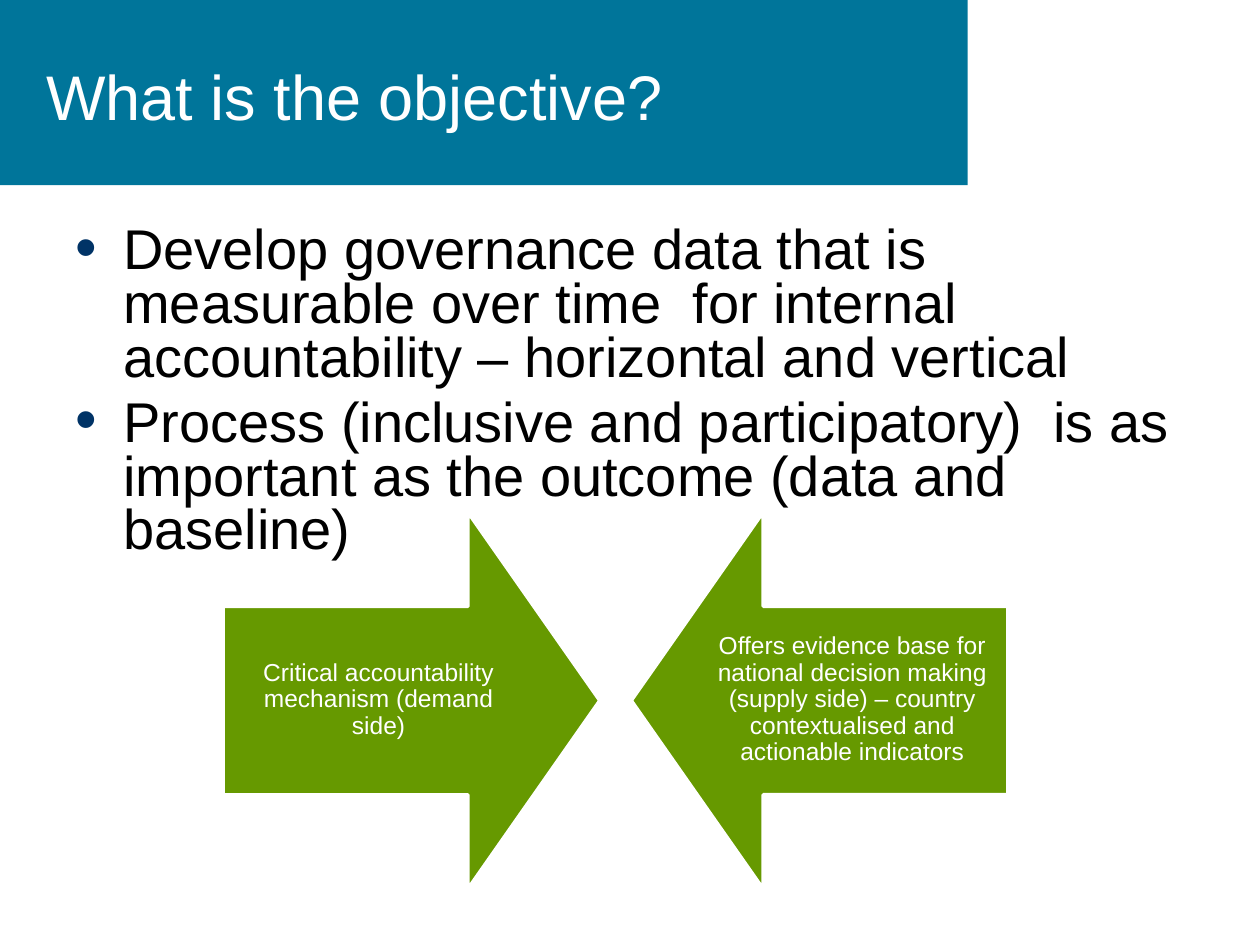
from lxml.etree import SubElement
from pptx import Presentation
from pptx.dml.color import RGBColor as RGB
from pptx.enum.shapes import MSO_SHAPE as Shape
from pptx.enum.text import MSO_ANCHOR as Anchor, PP_ALIGN as Align
from pptx.oxml.ns import qn
from pptx.util import Inches, Pt

THEME = {
    "font": "Arial",
    "banner": RGB.from_string("00759A"),
    "arrow": RGB.from_string("669900"),
    "light": RGB.from_string("FFFFFF"),
    "dark": RGB.from_string("000000"),
    "bullet": "003366",
    "title_size": 36,
    "body_size": 32,
    "label_size": 14,
}

deck = Presentation()
deck.slide_width, deck.slide_height = Inches(10), Inches(7.5)
col, row = deck.slide_width / 100, deck.slide_height / 75
slide = deck.slides.add_slide(deck.slide_layouts[6])


def area(left, top, width, height):
    return round(left * col), round(top * row), round(width * col), round(height * row)


def write(shapes, text, box, size, color, anchor=Anchor.MIDDLE, align=Align.LEFT,
          spacing=1.0, before=0, bullet=None, inset=None):
    frame = shapes.add_textbox(*area(*box)).text_frame
    frame.word_wrap = True
    frame.vertical_anchor = anchor
    if inset is not None:
        frame.margin_left = frame.margin_right = Inches(inset)
        frame.margin_top = frame.margin_bottom = Inches(inset)
    frame.text = text
    for index, paragraph in enumerate(frame.paragraphs):
        if bullet:
            props = paragraph._p.get_or_add_pPr()
            props.set("marL", str(Inches(0.38)))
            props.set("indent", str(-Inches(0.38)))
            SubElement(SubElement(props, qn("a:buClr")), qn("a:srgbClr"), val=THEME["bullet"])
            SubElement(props, qn("a:buSzPct"), val="110000")
            SubElement(props, qn("a:buFont"), typeface=THEME["font"])
            SubElement(props, qn("a:buChar"), char=bullet)
        paragraph.alignment = align
        paragraph.line_spacing = spacing
        paragraph.space_before = Pt(before if index else 0)
        paragraph.font.name = THEME["font"]
        paragraph.font.size = Pt(size)
        paragraph.font.color.rgb = color


banner = slide.shapes.add_shape(Shape.RECTANGLE, *area(0, 0, 76.8, 14.7))
banner.shadow.inherit = False
banner.fill.solid()
banner.fill.fore_color.rgb = THEME["banner"]
banner.line.fill.background()

write(slide.shapes, "What is the objective?", (2.7, 1.3, 70.2, 12.5),
      THEME["title_size"], THEME["light"])

objectives = [
    "Develop governance data that is measurable over time  for internal accountability – horizontal and vertical",
    "Process (inclusive and participatory)  is as important as the outcome (data and baseline)",
]
write(slide.shapes, "\n".join(objectives), (5, 17.5, 90, 49.5),
      THEME["body_size"], THEME["dark"], anchor=Anchor.TOP,
      spacing=0.8, before=0.2 * THEME["body_size"], bullet="•")

arrow_side, label_width, label_height = 29.9, 24.7, 14.9
sides = [
    ("Critical accountability mechanism (demand side)", 17.7, 17.7, 270),
    ("Offers evidence base for national decision making (supply side) – country "
     "contextualised and actionable indicators", 50.1, 80 - label_width, 90),
]
diagram = slide.shapes.add_group_shape()
for label, arrow_left, label_left, turn in sides:
    arrow = diagram.shapes.add_shape(
        Shape.DOWN_ARROW, *area(arrow_left, 40.65, arrow_side, arrow_side))
    arrow.rotation = turn
    arrow.adjustments[0], arrow.adjustments[1] = 0.5, 0.35
    arrow.shadow.inherit = False
    arrow.fill.solid()
    arrow.fill.fore_color.rgb = THEME["arrow"]
    arrow.line.color.rgb = THEME["light"]
    arrow.line.width = Pt(2)
    write(diagram.shapes, label, (label_left, 48.1, label_width, label_height),
          THEME["label_size"], THEME["light"], align=Align.CENTER, spacing=0.9, inset=0.11)

deck.save("out.pptx")
